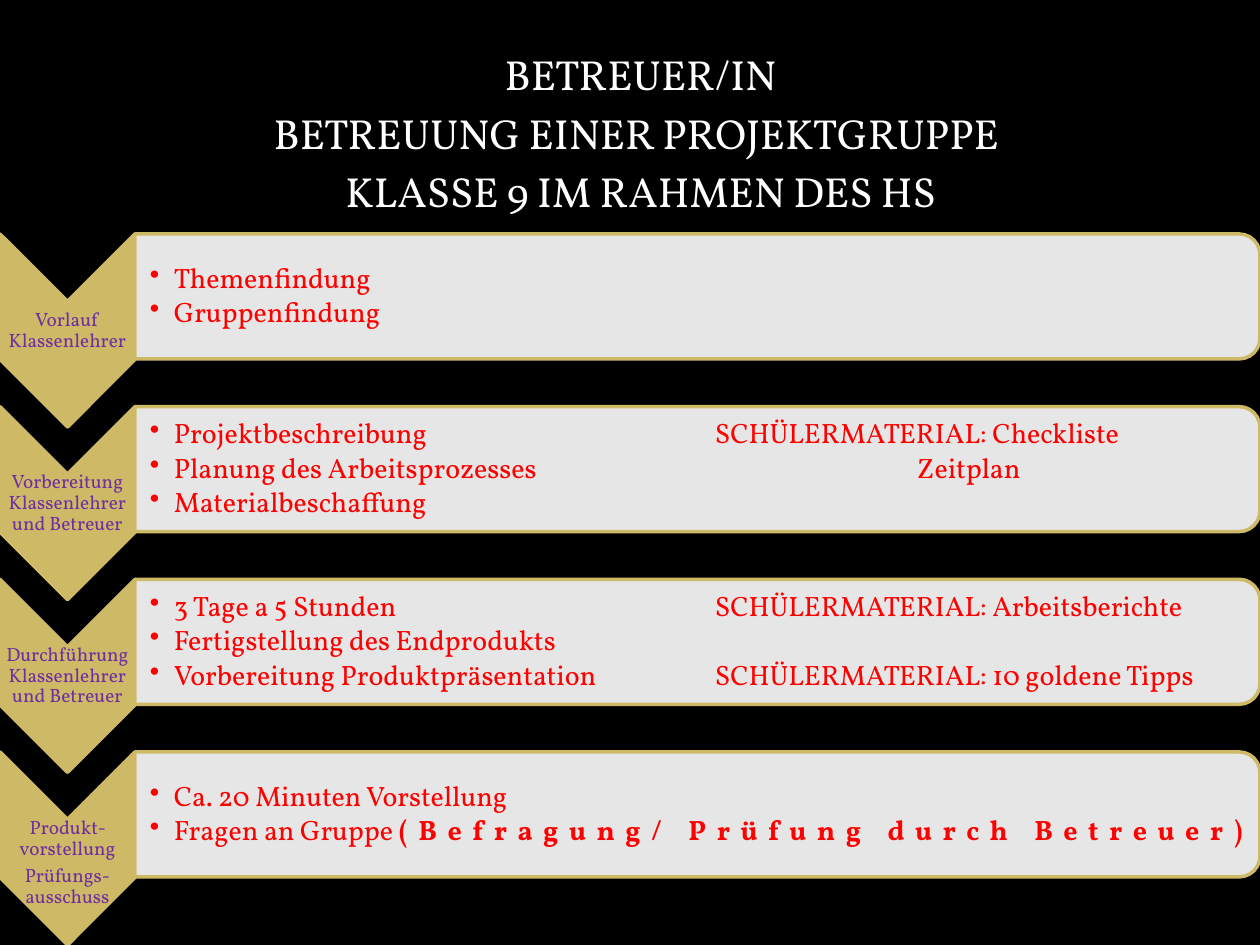
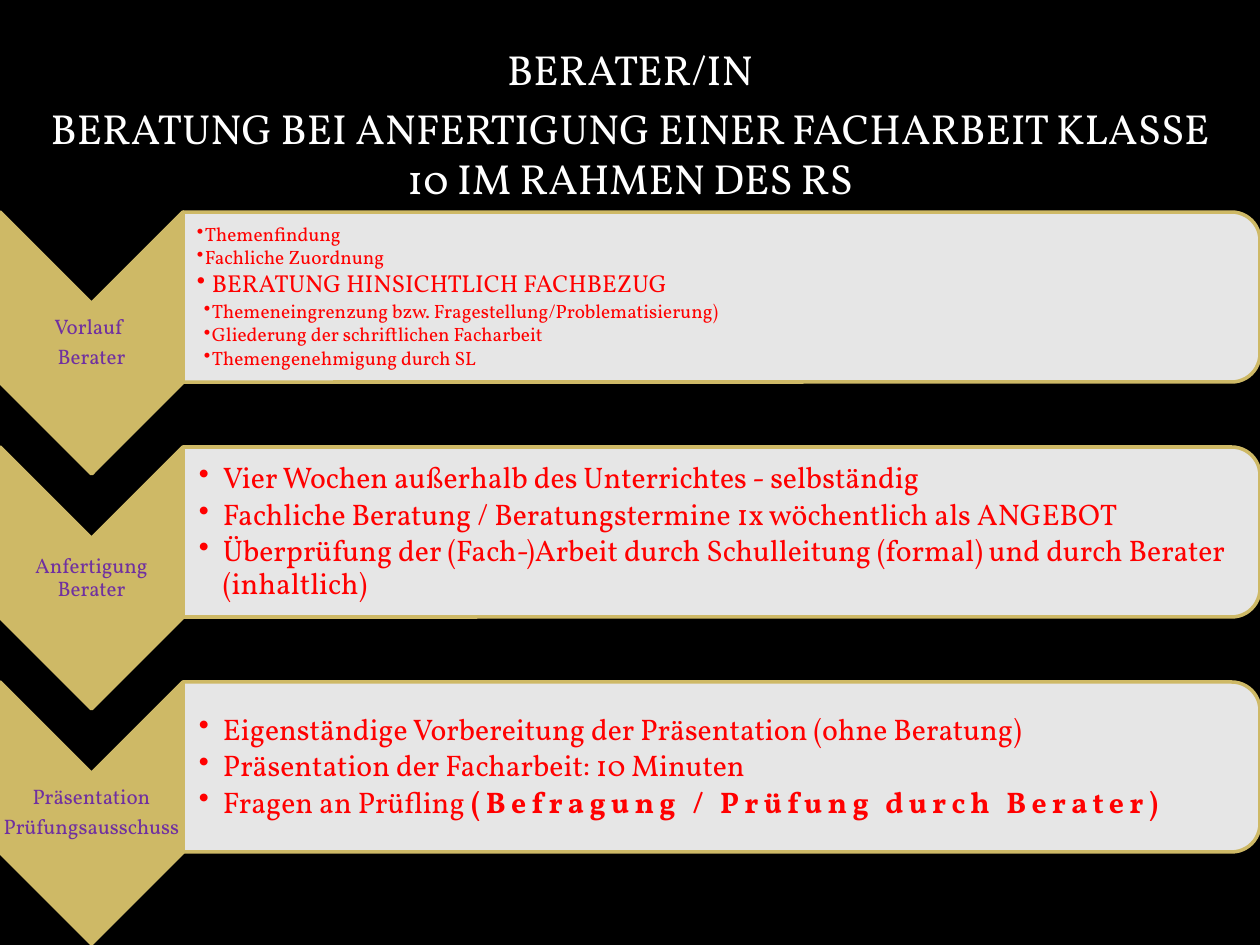
import pptx
import pptx.dml.color
import pptx.enum.shapes
import pptx.enum.text
import pptx.oxml.ns
import pptx.util
from lxml import etree

FONT = "Vollkorn"
BLACK, WHITE, GOLD, PURPLE, RED = "000000", "FFFFFF", "CEB966", "7030A0", "FF0000"
SHAPE = pptx.enum.shapes.MSO_SHAPE
ALIGN = pptx.enum.text.PP_ALIGN
ANCHOR = pptx.enum.text.MSO_ANCHOR
PX_PER_INCH = 126
CORNER_INSET = 0.05

SUPERVISOR = {
    "title": ["BETREUER/IN", "BETREUUNG EINER PROJEKTGRUPPE ", "KLASSE 9 IM RAHMEN DES HS"],
    "title_box": (35, 42, 1211, 185),
    "chevron": (135, 193), "bar_height": 125, "top": 234, "last_top": 752,
    "label_size": 11, "size": 16, "inset": 15,
    "rows": [
        {"label": ["Vorlauf Klassenlehrer"],
         "items": [{"text": "Themenfindung"}, {"text": "Gruppenfindung"}]},
        {"label": ["Vorbereitung Klassenlehrer und Betreuer"],
         "items": [{"text": "Projektbeschreibung\tSCHÜLERMATERIAL: Checkliste", "tab": 565},
                   {"text": "Planung des Arbeitsprozesses\tZeitplan", "tab": 767},
                   {"text": "Materialbeschaffung"}]},
        {"label": ["Durchführung Klassenlehrer und Betreuer"],
         "items": [{"text": "3 Tage a 5 Stunden\tSCHÜLERMATERIAL: Arbeitsberichte", "tab": 565},
                   {"text": "Fertigstellung des Endprodukts"},
                   {"text": "Vorbereitung Produktpräsentation\tSCHÜLERMATERIAL: 10 goldene Tipps",
                    "tab": 565}]},
        {"label": ["Produkt-vorstellung", "Prüfungs-ausschuss"], "drop": 14,
         "items": [{"text": "Ca. 20 Minuten Vorstellung"},
                   {"text": "Fragen an Gruppe ",
                    "strong": "(Befragung/ Prüfung durch Betreuer)", "spacing": 6}]},
    ],
}

ADVISER = {
    "title": ["BERATER/IN",
              "BERATUNG BEI ANFERTIGUNG EINER FACHARBEIT KLASSE 10 IM RAHMEN DES RS"],
    "title_box": (15, 37, 1230, 175),
    "chevron": (183, 262), "bar_height": 170, "top": 212, "last_top": 682,
    "label_size": 12, "size": 17, "inset": 16,
    "rows": [
        {"label": ["Vorlauf ", "Berater"], "size": 11, "inset": 14, "margin": 8, "hang": 8,
         "items": [{"text": "Themenfindung"},
                   {"text": "Fachliche Zuordnung"},
                   {"text": "BERATUNG HINSICHTLICH FACHBEZUG", "size": 14,
                    "margin": 15, "hang": 15},
                   {"text": "Themeneingrenzung bzw. Fragestellung/Problematisierung)",
                    "level": 2, "margin": 15},
                   {"text": "Gliederung der schriftlichen Facharbeit", "level": 2, "margin": 15},
                   {"text": "Themengenehmigung durch SL", "level": 2, "margin": 15}]},
        {"label": ["Anfertigung Berater"],
         "items": [{"text": "Vier Wochen außerhalb des Unterrichtes - selbständig"},
                   {"text": "Fachliche Beratung / Beratungstermine 1x wöchentlich als ANGEBOT"},
                   {"text": "Überprüfung der (Fach-)Arbeit durch Schulleitung (formal) "
                            "und durch Berater (inhaltlich)"}]},
        {"label": ["Präsentation", "Prüfungsausschuss"],
         "items": [{"text": "Eigenständige Vorbereitung der Präsentation (ohne Beratung)"},
                   {"text": "Präsentation der Facharbeit: 10 Minuten"},
                   {"text": "Fragen an Prüfling ",
                    "strong": "(Befragung / Prüfung durch Berater)", "spacing": 3}]},
    ],
}


def px(n):
    """Turn px into EMU."""
    return pptx.util.Emu(round(n * 914400 / PX_PER_INCH))


def rgb(color):
    """Turn a hex string into a colour."""
    return pptx.dml.color.RGBColor.from_string(color)


def apply(obj, **values):
    """Set attributes from format values."""
    for name, value in values.items():
        setattr(obj, name, value)


def sub(parent, tag, **attrs):
    """Append a drawing element with attributes."""
    el = etree.SubElement(parent, pptx.oxml.ns.qn(tag))
    for name, value in attrs.items():
        el.set(name, str(value))
    return el


def add_run(p, text, size, color, bold=False, spacing=0):
    """Add one formatted run to a paragraph."""
    r = p.add_run()
    r.text = text
    apply(r.font, name=FONT, size=pptx.util.Pt(size), bold=bold)
    r.font.color.rgb = rgb(color)
    if spacing:
        r.font._element.set("spc", str(spacing * 100))


def paragraphs(tf, items):
    """Yield each item with its paragraph."""
    for i, item in enumerate(items):
        yield item, tf.paragraphs[0] if i == 0 else tf.add_paragraph()


def add_title(slide, lines, box):
    """Place and format the title placeholder."""
    sp = slide.shapes.title
    apply(sp, **dict(zip(("left", "top", "width", "height"), map(px, box))))
    tf = sp.text_frame
    apply(tf, word_wrap=True, vertical_anchor=ANCHOR.TOP,
          auto_size=pptx.enum.text.MSO_AUTO_SIZE.NONE)
    for line, p in paragraphs(tf, lines):
        apply(p, alignment=ALIGN.CENTER, space_before=pptx.util.Pt(4.8))
        add_run(p, line, 24, WHITE)


def add_turned(slide, kind, x, y, w, h, fill, alpha=100):
    """Add a shape turned by 90 degrees that fills the given box."""
    sp = slide.shapes.add_shape(kind, px(x + (w - h) / 2), px(y + (h - w) / 2), px(h), px(w))
    sp.rotation = 90
    sp.shadow.inherit = False
    sp.fill.solid()
    sp.fill.fore_color.rgb = rgb(fill)
    if alpha < 100:
        clr = sp._element.spPr.find(".//" + pptx.oxml.ns.qn("a:srgbClr"))
        sub(clr, "a:alpha", val=alpha * 1000)
    sp.line.color.rgb = rgb(GOLD)
    sp.line.width = pptx.util.Pt(2)


def add_text(slide, x, y, w, h, inset=1):
    """Add a wrapped, vertically centred text box."""
    tf = slide.shapes.add_textbox(px(x), px(y), px(w), px(h)).text_frame
    apply(tf, word_wrap=True, vertical_anchor=ANCHOR.MIDDLE, margin_left=px(inset),
          margin_top=px(1), margin_right=px(1), margin_bottom=px(1))
    return tf


def add_label(slide, row, x, y, w, h, size):
    """Draw a phase chevron with its label."""
    add_turned(slide, SHAPE.CHEVRON, x, y, w, h, GOLD)
    tf = add_text(slide, x, y + w / 2 + row.get("drop", 0), w, h - w)
    for line, p in paragraphs(tf, row["label"]):
        apply(p, alignment=ALIGN.CENTER, line_spacing=0.9,
              space_after=pptx.util.Pt(round(0.35 * size, 1)))
        add_run(p, line, size, PURPLE)


def add_bullet(p, item):
    """Give a paragraph its indent, bullet and tab stop."""
    pPr = p._p.get_or_add_pPr()
    pPr.set("marL", str(px(item["margin"])))
    pPr.set("indent", str(-px(item["hang"])))
    sub(pPr, "a:buChar", char="•")
    if "tab" in item:
        sub(sub(pPr, "a:tabLst"), "a:tab", pos=px(item["tab"]), algn="l")


def add_bar(slide, row, x, y, w, h, defaults):
    """Draw a phase bar with its bulleted steps."""
    add_turned(slide, SHAPE.ROUND_2_SAME_RECTANGLE, x, y, w, h, WHITE, alpha=90)
    pad = round(h * CORNER_INSET)
    tf = add_text(slide, x, y + pad, w - pad, h - 2 * pad, defaults["inset"])
    for item, p in paragraphs(tf, row["items"]):
        item = {**defaults, **item}
        size = item["size"]
        apply(p, level=item["level"], alignment=ALIGN.LEFT, line_spacing=0.9,
              space_after=pptx.util.Pt(round(0.15 * size, 1)))
        add_bullet(p, item)
        add_run(p, item["text"], size, RED)
        if "strong" in item:
            add_run(p, item["strong"], size, RED, True, item["spacing"])


def add_phases(prs, content):
    """Build a slide with a title and a column of phases."""
    slide = prs.slides.add_slide(prs.slide_layouts[5])
    add_title(slide, content["title"], content["title_box"])
    w, h = content["chevron"]
    rows = content["rows"]
    step = (content["last_top"] - content["top"]) / (len(rows) - 1)
    for i, row in enumerate(rows):
        y = content["top"] + i * step
        defaults = {"level": 1, "margin": 24, "hang": 24,
                    "size": content["size"], "inset": content["inset"]}
        defaults.update((k, row[k]) for k in defaults if k in row)
        add_label(slide, row, 0, y, w, h, content["label_size"])
        add_bar(slide, row, w, y, 1260 - w, content["bar_height"], defaults)


def main():
    """Build and save the presentation."""
    prs = pptx.Presentation()
    apply(prs, slide_width=px(1260), slide_height=px(945))
    fill = prs.slide_master.background.fill
    fill.solid()
    fill.fore_color.rgb = rgb(BLACK)
    for content in (SUPERVISOR, ADVISER):
        add_phases(prs, content)
    prs.save("out.pptx")


if __name__ == "__main__":
    main()
